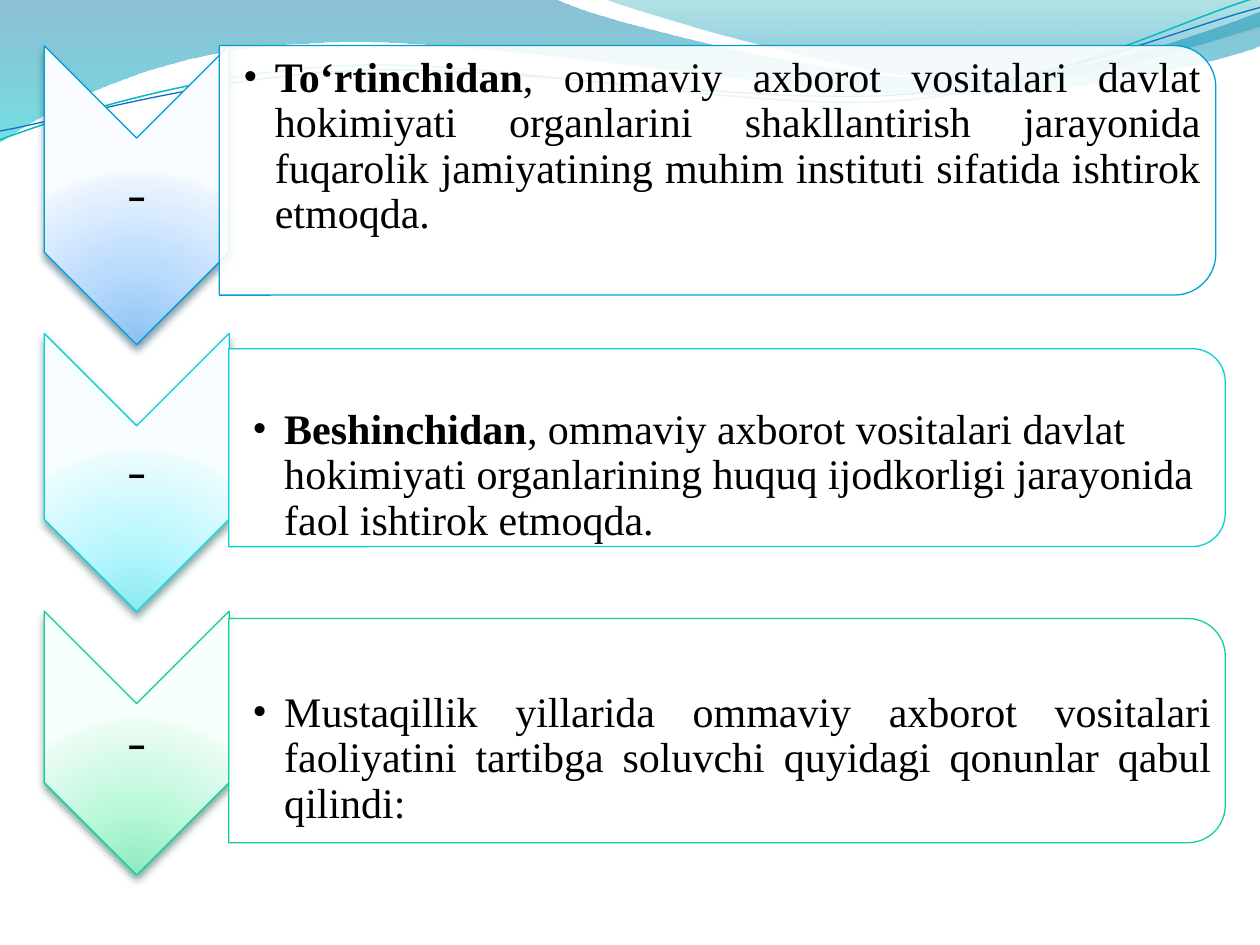
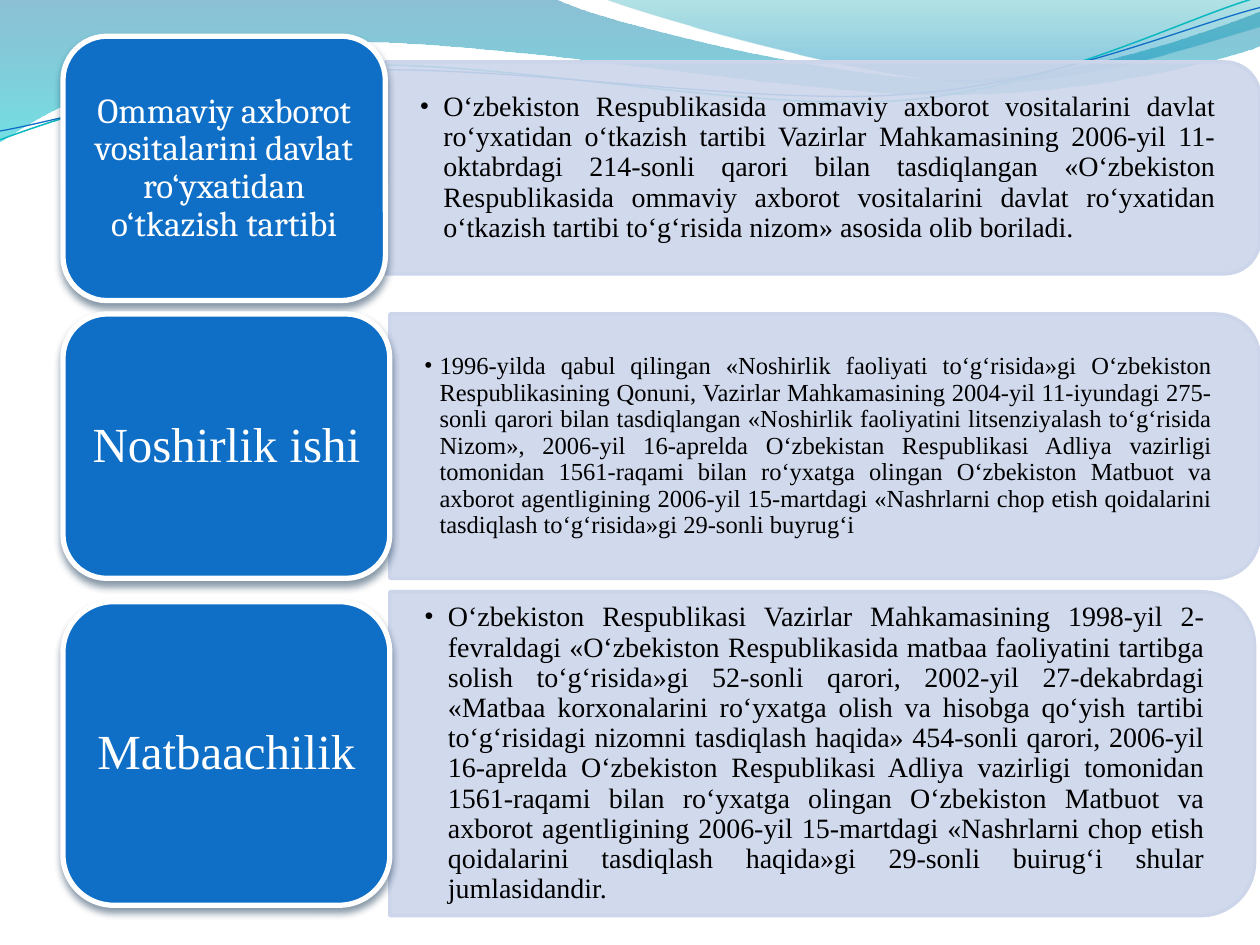
from lxml import etree
from pptx import Presentation
from pptx import util as u
from pptx.dml.color import RGBColor
from pptx.enum import shapes, text
from pptx.oxml import ns, parse_xml

BLACK = RGBColor(0x00, 0x00, 0x00)
WHITE = RGBColor(0xFF, 0xFF, 0xFF)
BLUE = RGBColor(0x0F, 0x6F, 0xC6)
SKY = RGBColor(0x00, 0x9D, 0xD9)
CYAN = RGBColor(0x0B, 0xD0, 0xD9)
GREEN = RGBColor(0x10, 0xCF, 0x9B)
TEAL = RGBColor(0x0A, 0xB8, 0xBF)
PALE = RGBColor(0xCC, 0xD5, 0xEA)
SKY_SHADE = RGBColor(0x00, 0x37, 0x4C)
CYAN_SHADE = RGBColor(0x02, 0x4B, 0x4E)
GREEN_SHADE = RGBColor(0x04, 0x4A, 0x37)
BLUE_SHADE = RGBColor(0x04, 0x27, 0x47)

SERIF = "Times New Roman"
HEADING = "Cambria"
DOWNWARD = '<a:lin ang="5400000" scaled="0"/>'
FROM_BELOW = '<a:path path="circle"><a:fillToRect l="50000" t="130000" r="50000" b="-30000"/></a:path>'


def paint(shape, fill=None, line=None, width=0.75, alpha=100, shadow=None, shade=DOWNWARD, turned=False):
    properties = shape.element.spPr
    if turned:
        centre_x, centre_y = shape.left + shape.width // 2, shape.top + shape.height // 2
        shape.width, shape.height = shape.height, shape.width
        shape.left, shape.top = centre_x - shape.width // 2, centre_y - shape.height // 2
        shape.rotation = 90
    shape.fill.background()
    if isinstance(fill, RGBColor):
        shape.fill.solid()
        shape.fill.fore_color.rgb = fill
        if alpha < 100:
            colour = properties.find(".//" + ns.qn("a:srgbClr"))
            etree.SubElement(colour, ns.qn("a:alpha"), val=str(alpha * 1000))
    elif fill:
        stops = "".join(
            f'<a:gs pos="{pos * 1000}"><a:srgbClr val="{colour}"><a:alpha val="{opacity * 1000}"/></a:srgbClr></a:gs>'
            for pos, colour, opacity in fill)
        gradient = parse_xml(
            f'<a:gradFill {ns.nsdecls("a")} rotWithShape="1"><a:gsLst>{stops}</a:gsLst>{shade}</a:gradFill>')
        properties.replace(properties.find(ns.qn("a:noFill")), gradient)
    if line is None:
        shape.line.fill.background()
    else:
        shape.line.color.rgb = line
        shape.line.width = u.Pt(width)
    shape.shadow.inherit = False
    if shadow is not None:
        properties.find(ns.qn("a:effectLst")).append(parse_xml(
            f'<a:outerShdw {ns.nsdecls("a")} blurRad="57150" dist="38100" dir="5400000" rotWithShape="0">'
            f'<a:srgbClr val="{shadow}"><a:alpha val="48000"/></a:srgbClr></a:outerShdw>'))


def write(frame, words, size, font=SERIF, colour=BLACK, lead="", align=text.PP_ALIGN.CENTER,
          anchor=text.MSO_ANCHOR.MIDDLE, left=0.08, right=0.08, hanging=0):
    frame.word_wrap = True
    frame.auto_size = text.MSO_AUTO_SIZE.NONE
    frame.vertical_anchor = anchor
    frame.margin_left, frame.margin_right = u.Cm(left), u.Cm(right)
    frame.margin_top = frame.margin_bottom = 0
    paragraph = frame.paragraphs[0]
    paragraph.alignment = align
    paragraph.line_spacing = 0.9
    paragraph.space_before = paragraph.space_after = u.Pt(0)
    if hanging:
        settings = paragraph._p.get_or_add_pPr()
        settings.set("marL", str(u.Cm(hanging)))
        settings.set("indent", str(-u.Cm(hanging)))
        etree.SubElement(settings, ns.qn("a:buFont"), typeface=SERIF)
        etree.SubElement(settings, ns.qn("a:buChar"), char="•")
    for part, bold in ((lead, True), (words, False)):
        if part:
            run = paragraph.add_run()
            run.text = part
            run.font.size, run.font.name, run.font.bold = u.Pt(size), font, bold
            run.font.color.rgb = colour


prs = Presentation()
prs.slide_width, prs.slide_height = u.Cm(25.4), u.Cm(19.05)
layout = prs.slide_layouts.get_by_name("Comparison")
media_role = prs.slides.add_slide(layout)
media_laws = prs.slides.add_slide(layout)

waves = [
    ([(0, 0), (4.4, -0.01), (4.76, 0.17, 6.64, 0.63, 7.58, 0.63), (8.53, 0.63, 9.58, 0.26, 10, 0.09),
      (10.01, 0.36), (9.83, 0.44, 8.7, 0.76, 7.46, 0.75), (6.22, 0.75, 3.82, 0.28, 2.57, 0.34),
      (1.29, 0.36, 0.46, 0.83, -0.01, 1.13), (0, 0)],
     dict(fill=[(0, "0074A1", 45), (100, "00C6CF", 55)])),
    ([(4.79, -0.01), (5.09, 0.11, 6.82, 0.62, 7.69, 0.65), (8.56, 0.69, 9.61, 0.32, 10, 0.21), (10, 0),
      (4.79, -0.01)],
     dict(fill=[(0, "00A1A9", 30), (80, "008BBF", 45)])),
    ([(0, 1.11), (0.48, 0.93, 1.58, 0.57, 2.77, 0.52), (3.95, 0.47, 5.93, 0.89, 7.13, 0.8),
      (8.33, 0.71, 9.38, 0.15, 9.98, -0.02)],
     dict(line=TEAL, width=0.85)),
    ([(0, 1.04), (0.47, 0.96, 1.64, 0.61, 2.83, 0.56), (4.03, 0.51, 5.97, 0.84, 7.17, 0.75),
      (8.36, 0.67, 9.41, 0.21, 10, 0.06)],
     dict(line=BLUE)),
]
for number, (segments, look) in enumerate(waves):
    segments = [[round(value * 1000) for value in segment] for segment in segments]
    ends = [segment[-2:] for segment in segments]
    outline = media_role.shapes.build_freeform(*ends[0], scale=u.Cm(2.54) / 1000)
    outline.add_line_segments(ends[1:], close="fill" in look)
    wave = outline.convert_to_shape()
    paint(wave, **look)
    min_x, min_y = (min(values) for values in zip(*ends))
    straights = wave.element.findall(".//" + ns.qn("a:lnTo"))
    for straight, segment in zip(straights, segments[1:]):
        if len(segment) == 6:
            curve = etree.Element(ns.qn("a:cubicBezTo"))
            for x, y in zip(segment[::2], segment[1::2]):
                etree.SubElement(curve, ns.qn("a:pt"), x=str(x - min_x), y=str(y - min_y))
            straight.getparent().replace(straight, curve)
    wave.element.nvSpPr.cNvPr.id = 20 + number
    layout.shapes.element.append(wave.element)

points_made = [
    (0.92, 6.03, 4.42, 0.92, 5.03, 1.13, SKY, SKY_SHADE, ("8BC2F1", "B9DBFD", "EAF3FE", "F8FBFF"),
     text.PP_ALIGN.JUSTIFY, "To‘rtinchidan",
     ", ommaviy axborot vositalari davlat hokimiyati organlarini shakllantirish jarayonida "
     "fuqarolik jamiyatining muhim instituti sifatida ishtirok etmoqda."),
    (6.72, 5.61, 4.61, 7.03, 3.99, 8.23, CYAN, CYAN_SHADE, ("8BE9F1", "B9F7FD", "EAFCFE", "F8FEFF"),
     text.PP_ALIGN.LEFT, "Beshinchidan",
     ", ommaviy axborot vositalari davlat hokimiyati organlarining huquq ijodkorligi jarayonida "
     "faol ishtirok etmoqda."),
    (12.32, 5.32, 4.61, 12.47, 4.52, 13.93, GREEN, GREEN_SHADE, ("8DEAC2", "BAF8DB", "EAFCF3", "F7FFFB"),
     text.PP_ALIGN.JUSTIFY, "",
     "Mustaqillik yillarida ommaviy axborot vositalari faoliyatini tartibga soluvchi quyidagi "
     "qonunlar qabul qilindi:"),
]
ARROW_WIDTH, PANEL_WIDTH = 3.73, 20.09
for index, (arrow_top, arrow_height, left, top, height, list_top, accent, shadow, tints, align, lead,
            words) in enumerate(points_made, 1):
    arrow = media_role.shapes.add_shape(shapes.MSO_SHAPE.CHEVRON, u.Cm(0.89), u.Cm(arrow_top),
                                        u.Cm(ARROW_WIDTH), u.Cm(arrow_height))
    paint(arrow, [(pos, tint, 100) for pos, tint in zip((0, 43, 93, 100), tints)], accent,
          shadow=shadow, shade=FROM_BELOW, turned=True)
    dash = media_role.shapes.add_textbox(u.Cm(0.89), u.Cm(arrow_top + ARROW_WIDTH / 2),
                                         u.Cm(ARROW_WIDTH), u.Cm(arrow_height - ARROW_WIDTH))
    write(dash.text_frame, "-", 37, HEADING)
    panel = media_role.shapes.add_shape(shapes.MSO_SHAPE.ROUND_2_SAME_RECTANGLE, u.Cm(left), u.Cm(top),
                                        u.Cm(PANEL_WIDTH), u.Cm(height))
    paint(panel, WHITE, accent, alpha=90, turned=True)
    body = media_role.placeholders[index]
    body.left, body.top = u.Cm(left), u.Cm(list_top)
    body.width, body.height = u.Cm(PANEL_WIDTH - 0.05 * height), u.Cm(top + height - list_top)
    write(body.text_frame, words, 24, lead=lead, align=align, anchor=text.MSO_ANCHOR.TOP,
          left=0.48, right=0.05, hanging=0.64)
    media_role.shapes.element.append(body.element)

topics = [
    ((1.27, 0.73, 6.5, 5.33), (7.77, 1.25, 17.63, 4.27), HEADING, 20, 0.2, 16, 0.48,
     "Ommaviy axborot vositalarini davlat ro‘yxatidan o‘tkazish tartibi",
     "O‘zbekiston Respublikasida ommaviy axborot vositalarini davlat ro‘yxatidan o‘tkazish tartibi "
     "Vazirlar Mahkamasining 2006-yil 11-oktabrdagi 214-sonli qarori bilan tasdiqlangan «O‘zbekiston "
     "Respublikasida ommaviy axborot vositalarini davlat ro‘yxatidan o‘tkazish tartibi to‘g‘risida "
     "nizom» asosida olib boriladi."),
    ((1.27, 6.33, 6.59, 5.33), (7.86, 6.33, 17.53, 5.33), SERIF, 28, 0.3, 14, 0.31,
     "Noshirlik ishi",
     "1996-yilda qabul qilingan «Noshirlik faoliyati to‘g‘risida»gi O‘zbekiston Respublikasining "
     "Qonuni, Vazirlar Mahkamasining 2004-yil 11-iyundagi 275-sonli qarori bilan tasdiqlangan "
     "«Noshirlik faoliyatini litsenziyalash to‘g‘risida Nizom», 2006-yil 16-aprelda O‘zbekistan "
     "Respublikasi Adliya vazirligi tomonidan 1561-raqami bilan ro‘yxatga olingan O‘zbekiston Matbuot "
     "va axborot agentligining 2006-yil 15-martdagi «Nashrlarni chop etish qoidalarini tasdiqlash "
     "to‘g‘risida»gi 29-sonli buyrug‘i"),
    ((1.27, 12.13, 6.59, 6.12), (7.86, 11.93, 17.43, 6.53), SERIF, 28, 0.3, 16, 0.48,
     "Matbaachilik",
     "O‘zbekiston Respublikasi Vazirlar Mahkamasining 1998-yil 2-fevraldagi «O‘zbekiston "
     "Respublikasida matbaa faoliyatini tartibga solish to‘g‘risida»gi 52-sonli qarori, 2002-yil "
     "27-dekabrdagi «Matbaa korxonalarini ro‘yxatga olish va hisobga qo‘yish tartibi to‘g‘risidagi "
     "nizomni tasdiqlash haqida» 454-sonli qarori, 2006-yil 16-aprelda O‘zbekiston Respublikasi Adliya "
     "vazirligi tomonidan 1561-raqami bilan ro‘yxatga olingan O‘zbekiston Matbuot va axborot "
     "agentligining 2006-yil 15-martdagi «Nashrlarni chop etish qoidalarini tasdiqlash haqida»gi "
     "29-sonli buirug‘i shular jumlasidandir."),
]
for index, (tile_box, panel_box, font, tile_size, inset, list_size, hanging, topic,
            words) in enumerate(topics, 1):
    panel = media_laws.shapes.add_shape(shapes.MSO_SHAPE.ROUND_2_SAME_RECTANGLE, *map(u.Cm, panel_box))
    paint(panel, PALE, PALE, width=2, alpha=90, turned=True)
    tile = media_laws.shapes.add_shape(shapes.MSO_SHAPE.ROUNDED_RECTANGLE, *map(u.Cm, tile_box))
    paint(tile, BLUE, WHITE, width=3, shadow=BLUE_SHADE)
    write(tile.text_frame, topic, tile_size, font, WHITE, left=inset, right=inset)
    left, top, width, height = panel_box
    body = media_laws.placeholders[index]
    body.left, body.top = u.Cm(left), u.Cm(top)
    body.width, body.height = u.Cm(width - 0.05 * height), u.Cm(height)
    write(body.text_frame, words, list_size, align=text.PP_ALIGN.JUSTIFY,
          left=0.69, right=0.68, hanging=hanging)
    media_laws.shapes.element.append(body.element)

for slide in (media_role, media_laws):
    for unused in (slide.placeholders[0], slide.placeholders[4]):
        slide.shapes.element.remove(unused.element)

prs.save("out.pptx")
